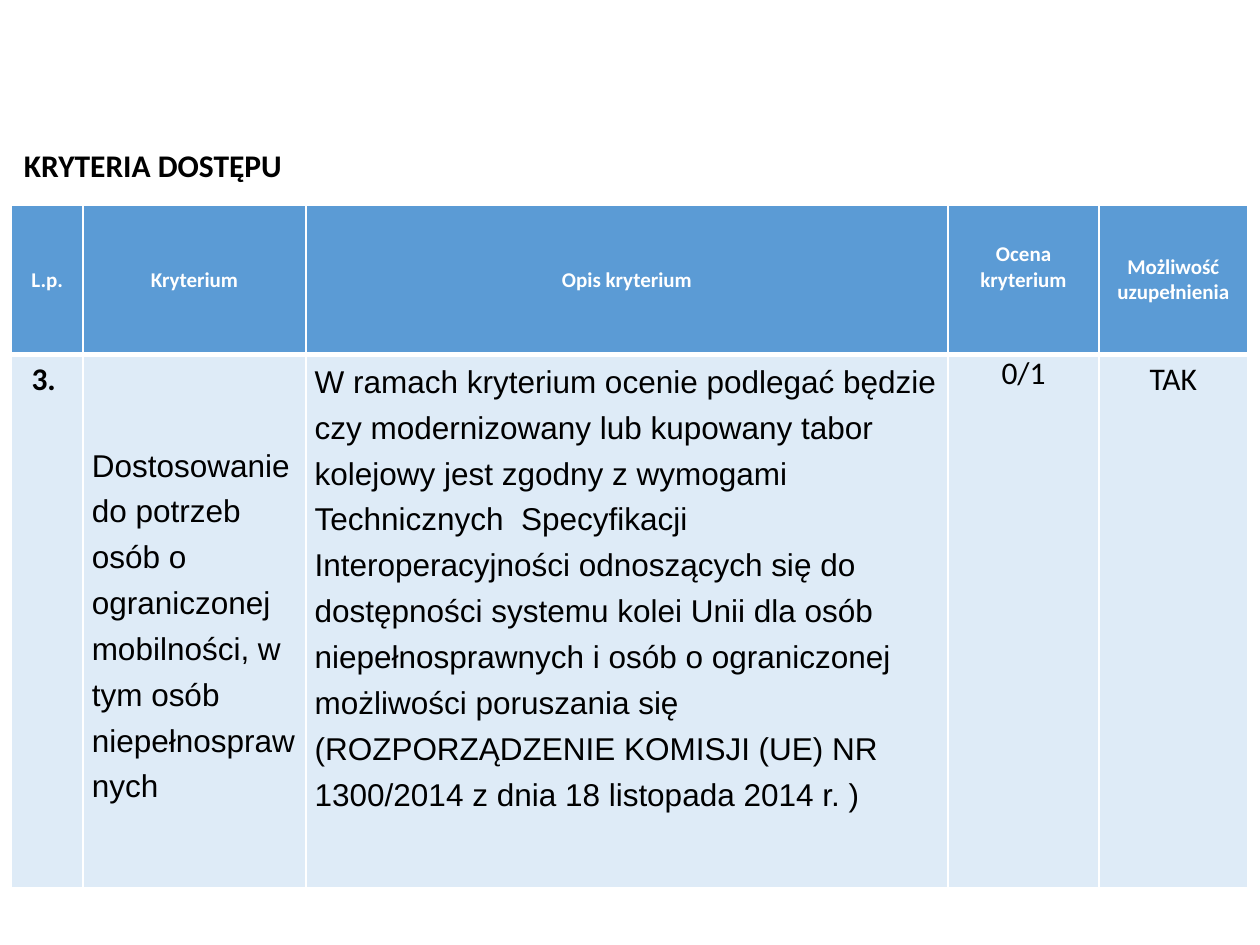
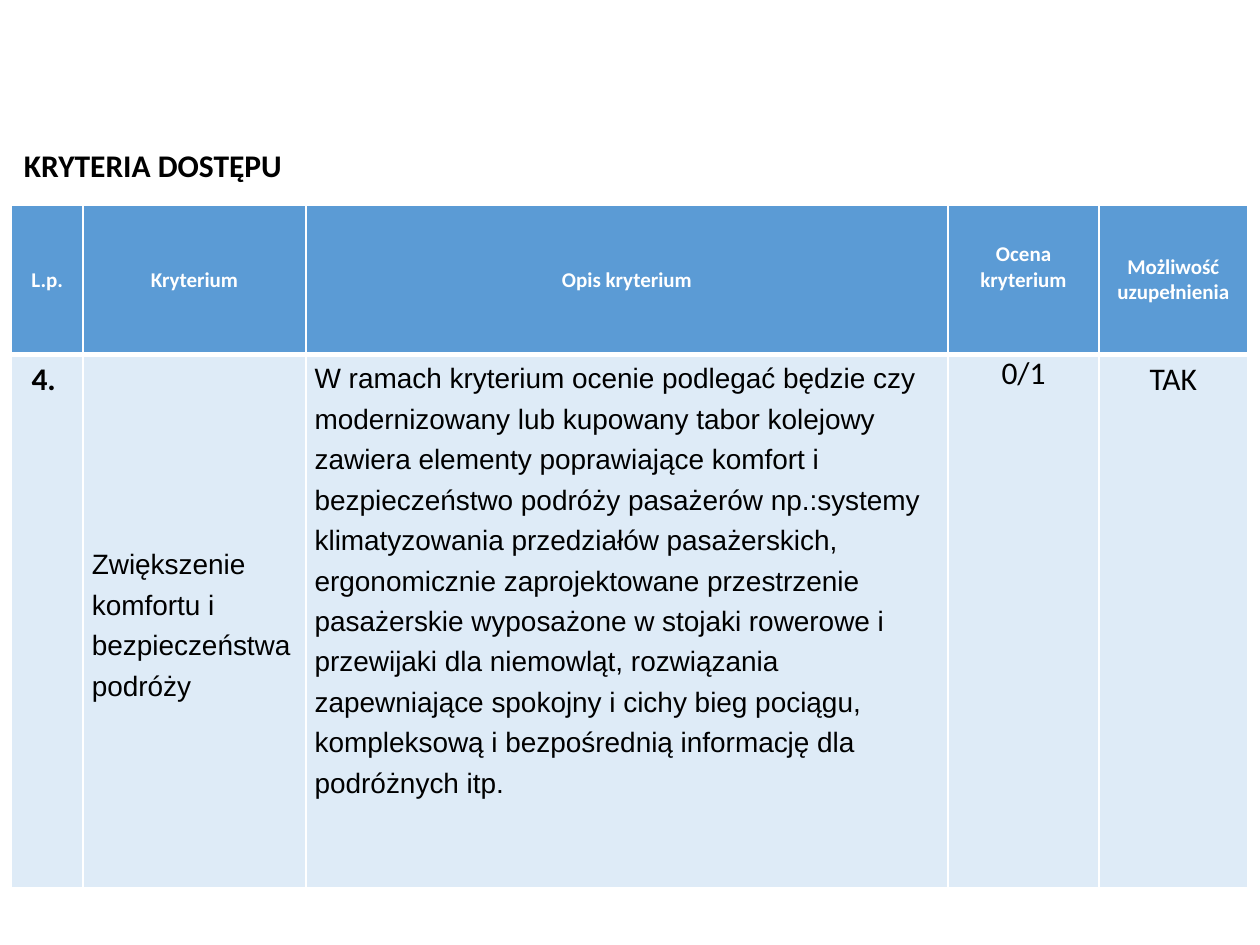
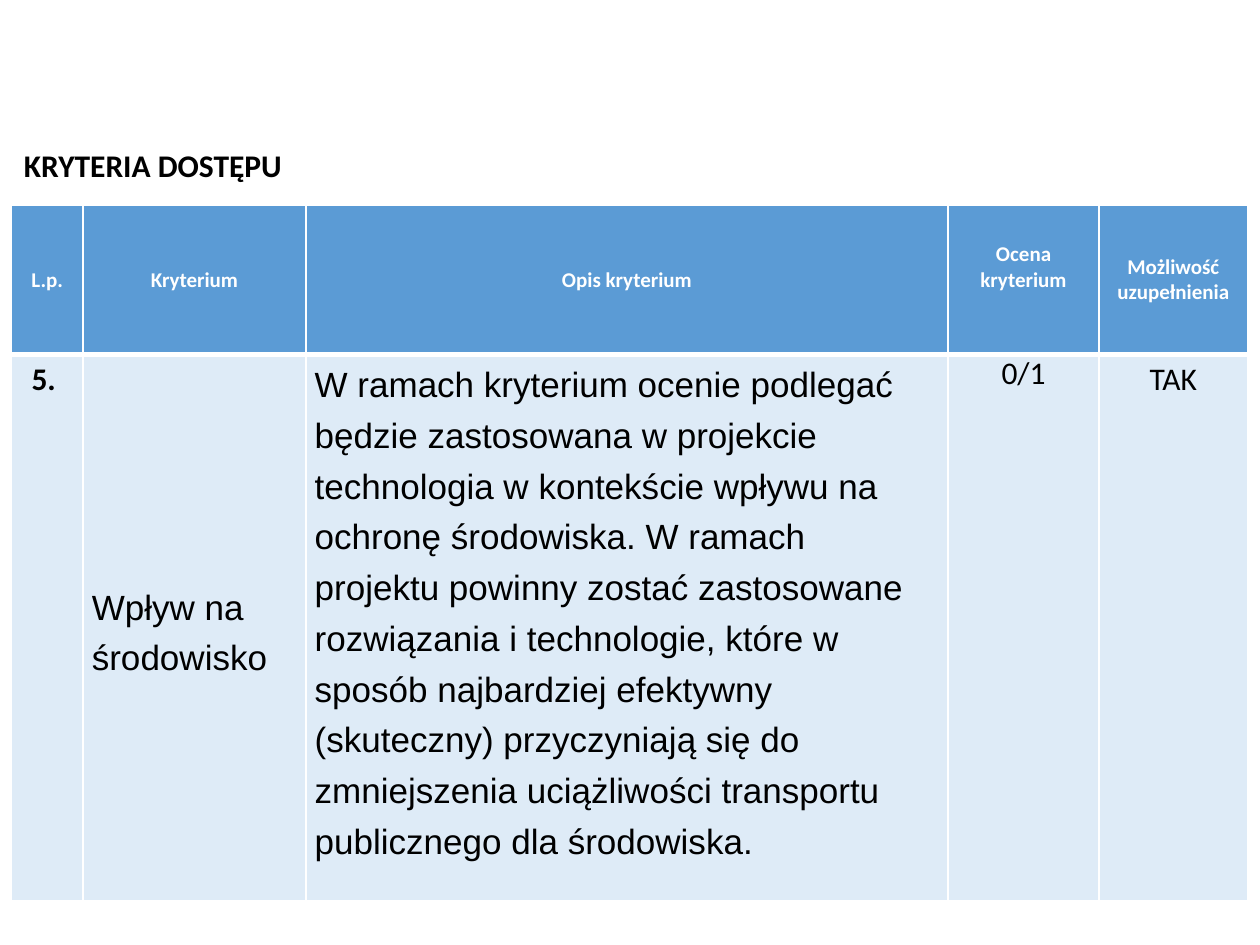
from pptx import Presentation
from pptx.dml.color import RGBColor
from pptx.enum import text
from pptx.oxml import parse_xml
from pptx.oxml.ns import nsdecls
from pptx.util import Pt

# Shared look
WHITE, BLACK = "FFFFFF", "000000"
HEADER_BLUE, ROW_BLUE = "5B9BD5", "DEEBF7"
HEADING_FONT, BODY_FONT = "Calibri", "Arial"
CENTER, LEFT = text.PP_ALIGN.CENTER, text.PP_ALIGN.LEFT
MIDDLE, TOP = text.MSO_ANCHOR.MIDDLE, text.MSO_ANCHOR.TOP

# Shared layout, in points: left, top, width, height
HEADING_BOX = (6.5, 80, 163.5, 29)
TABLE_BOX = (6.5, 117.5, 706.5, 390)
COLUMN_SHARES = (0.57, 1.77, 5.1, 1.2, 1.18)
HEADER_HEIGHT = 85
CELL_MARGINS = (7.2, 3.6, 7.2, 3.6)
SCORE_HEADER_MARGINS = (7.2, 3.6, 7.2, 18)  # lifts the score heading
ROW_MARGINS = (5, 0, 5, 0)

HEADING = "KRYTERIA DOSTĘPU"
COLUMN_NAMES = ("L.p.", "Kryterium", "Opis kryterium", "Ocena kryterium",
                "Możliwość uzupełnienia")

# Number, criterion, description, size of the two texts
CRITERIA = [
    ("3. ",
     "Dostosowanie do potrzeb osób o ograniczonej mobilności, w tym osób "
     "niepełnosprawnych",
     "W ramach kryterium ocenie podlegać będzie czy modernizowany lub kupowany "
     "tabor kolejowy jest zgodny z wymogami Technicznych  Specyfikacji "
     "Interoperacyjności odnoszących się do dostępności systemu kolei Unii dla "
     "osób niepełnosprawnych i osób o ograniczonej możliwości poruszania się "
     "(ROZPORZĄDZENIE KOMISJI (UE) NR 1300/2014 z dnia 18 listopada 2014 r. )",
     18),
    ("4. ",
     "Zwiększenie komfortu i bezpieczeństwa podróży",
     "W ramach kryterium ocenie podlegać będzie czy modernizowany lub kupowany "
     "tabor kolejowy zawiera elementy poprawiające komfort i bezpieczeństwo "
     "podróży pasażerów np.:systemy klimatyzowania przedziałów pasażerskich, "
     "ergonomicznie zaprojektowane przestrzenie pasażerskie wyposażone w stojaki "
     "rowerowe i przewijaki dla niemowląt, rozwiązania zapewniające spokojny i "
     "cichy bieg pociągu, kompleksową i bezpośrednią informację dla podróżnych "
     "itp.",
     16),
    ("5. ",
     "Wpływ na środowisko",
     "W ramach kryterium ocenie podlegać będzie zastosowana w projekcie "
     "technologia w kontekście wpływu na ochronę środowiska. W ramach projektu "
     "powinny zostać zastosowane rozwiązania i technologie, które w sposób "
     "najbardziej efektywny (skuteczny) przyczyniają się do zmniejszenia "
     "uciążliwości transportu publicznego dla środowiska.",
     20),
]


def color(hex_value):
    return RGBColor.from_string(hex_value)


def write(paragraph, words, size, font=HEADING_FONT, ink=BLACK, bold=False,
          align=CENTER, line_spacing=None):
    paragraph.alignment = align
    paragraph.line_spacing = line_spacing
    run = paragraph.add_run()
    run.text = words
    run.font.size = Pt(size)
    run.font.name = font
    run.font.bold = bold
    run.font.color.rgb = color(ink)


def format_cell(cell, fill, anchor, margins, top_line, bottom_line):
    cell.vertical_anchor = anchor
    (cell.margin_left, cell.margin_top,
     cell.margin_right, cell.margin_bottom) = map(Pt, margins)
    # Borders come before the fill in the cell properties
    properties = cell._tc.get_or_add_tcPr()
    for side, width in zip("LRTB", (1, 1, top_line, bottom_line)):
        properties.append(parse_xml(
            f'<a:ln{side} {nsdecls("a")} w="{Pt(width)}"><a:solidFill>'
            f'<a:srgbClr val="{WHITE}"/></a:solidFill></a:ln{side}>'))
    cell.fill.solid()
    cell.fill.fore_color.rgb = color(fill)


def add_heading(slide, box):
    heading = slide.shapes.title
    heading.left, heading.top, heading.width, heading.height = map(Pt, box)
    frame = heading.text_frame
    frame.word_wrap = False
    frame.auto_size = text.MSO_AUTO_SIZE.SHAPE_TO_FIT_TEXT
    frame.vertical_anchor = MIDDLE
    write(frame.paragraphs[0], HEADING, 18, bold=True, align=LEFT)


def fill_header(cells):
    for cell, name in zip(cells, COLUMN_NAMES):
        margins = SCORE_HEADER_MARGINS if name == "Ocena kryterium" else CELL_MARGINS
        format_cell(cell, HEADER_BLUE, MIDDLE, margins, 1, 3)
        write(cell.text_frame.paragraphs[0], name, 12, ink=WHITE, bold=True)


def fill_criterion(cells, number, criterion, description, size):
    number_cell, criterion_cell, description_cell, score_cell, supplement_cell = cells
    for cell in cells:
        anchor = MIDDLE if cell is criterion_cell else TOP
        format_cell(cell, ROW_BLUE, anchor, ROW_MARGINS, 3, 1)

    write(number_cell.text_frame.paragraphs[0], number, 18, bold=True,
          line_spacing=1.15)
    for cell, words in ((criterion_cell, criterion), (description_cell, description)):
        paragraph = cell.text_frame.paragraphs[0]
        paragraph.space_before = Pt(4 if cell is None else 0)
        paragraph.space_after = Pt(4)
        write(paragraph, words, size, BODY_FONT, align=LEFT, line_spacing=1.3)
    write(score_cell.text_frame.paragraphs[0], "0/1", 18)
    write(supplement_cell.text_frame.paragraphs[0], "TAK", 18, line_spacing=1.15)


def add_criteria_table(slide, box, criterion):
    left, top, width, height = box
    table = slide.shapes.add_table(2, len(COLUMN_NAMES), Pt(left), Pt(top),
                                   Pt(width), Pt(height)).table
    for column, share in zip(table.columns, COLUMN_SHARES):
        column.width = Pt(round(width * share / sum(COLUMN_SHARES), 2))
    header, body = table.rows
    header.height, body.height = Pt(HEADER_HEIGHT), Pt(height - HEADER_HEIGHT)
    fill_header(list(header.cells))
    fill_criterion(list(body.cells), *criterion)


def main():
    deck = Presentation()
    deck.slide_width, deck.slide_height = Pt(720), Pt(540)
    title_only = deck.slide_layouts[5]
    for criterion in CRITERIA:
        slide = deck.slides.add_slide(title_only)
        add_criteria_table(slide, TABLE_BOX, criterion)
        add_heading(slide, HEADING_BOX)
    deck.save("out.pptx")


if __name__ == "__main__":
    main()
